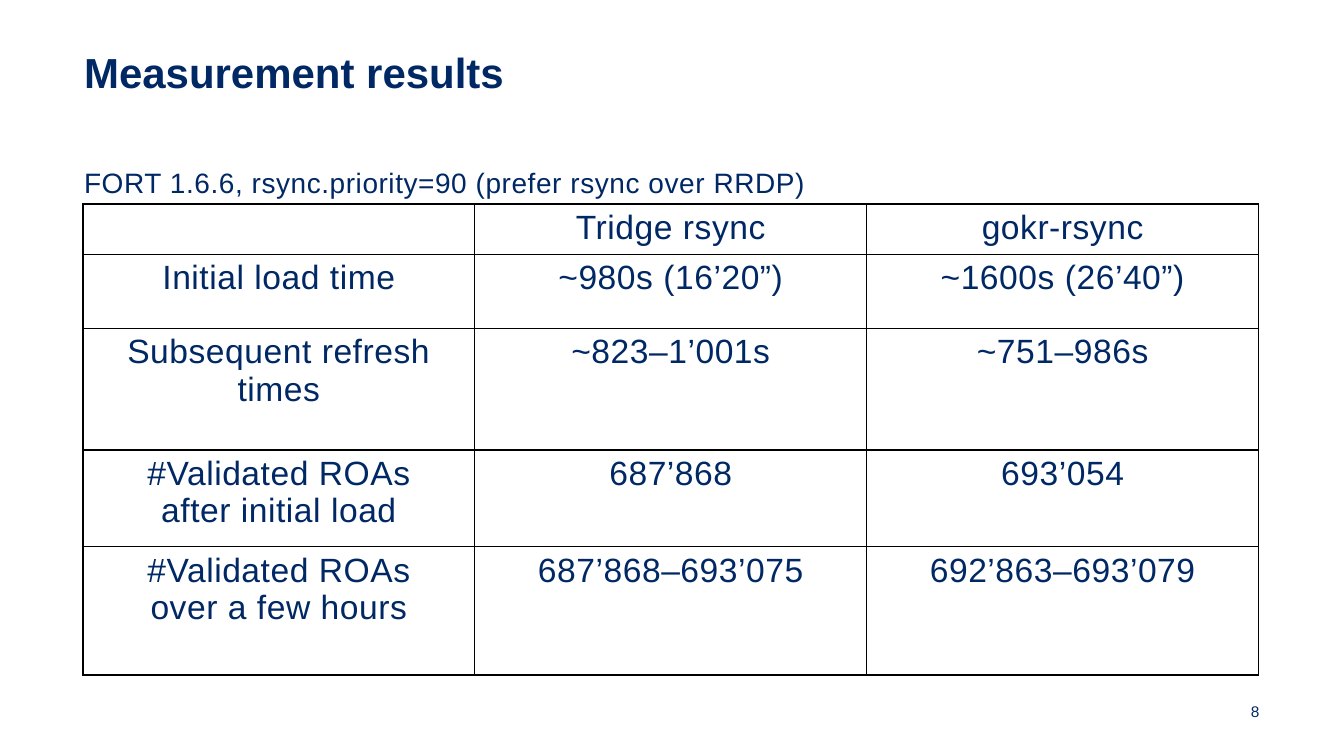
"""Build the measurement results slide."""
from lxml import etree
from pptx import Presentation
from pptx import util as u
from pptx.dml.color import RGBColor
from pptx.enum import text
from pptx.oxml.ns import qn

COLORS = {"navy": "002864", "line": "000000"}
CENTER, RIGHT = text.PP_ALIGN.CENTER, text.PP_ALIGN.RIGHT

ROWS = [
    ["", "Tridge rsync", "gokr-rsync"],
    ["Initial load time", "~980s (16’20”)", "~1600s (26’40”)"],
    ["Subsequent refresh times", "~823–1’001s", "~751–986s"],
    ["#Validated ROAs\nafter initial load", "687’868", "693’054"],
    ["#Validated ROAs\nover a few hours", "687’868–693’075", "692’863–693’079"],
]
ROW_HEIGHTS = [1.19, 1.86, 3.07, 2.44, 3.23]


def write(tf, content, size=24, bold=False, align=None, spacing=None, tracking=40):
    for i, line in enumerate(content.split("\n")):
        p = tf.add_paragraph() if i else tf.paragraphs[0]
        p.alignment = align
        p.line_spacing = spacing
        r = p.add_run()
        r.text = line
        r.font.name = "Arial"
        r.font.size = u.Pt(size)
        r.font.bold = bold
        r.font.color.rgb = RGBColor.from_string(COLORS["navy"])
        r._r.get_or_add_rPr().set("spc", str(tracking))


class Deck:
    """Holds the slide style and the current slide."""

    def __init__(self):
        self.prs = Presentation()
        self.prs.slide_width, self.prs.slide_height = u.Cm(33.87), u.Cm(19.05)
        self.s = self.prs.slides.add_slide(self.prs.slide_layouts[6])

    def textbox(self, content, x, y, w, h, **fmt):
        tf = self.s.shapes.add_textbox(u.Cm(x), u.Cm(y), u.Cm(w), u.Cm(h)).text_frame
        tf.word_wrap = True
        tf.margin_left = tf.margin_top = tf.margin_right = tf.margin_bottom = 0
        write(tf, content, **fmt)

    def border(self, cell):
        tcPr = cell._tc.get_or_add_tcPr()
        for side in ("a:lnL", "a:lnR", "a:lnT", "a:lnB"):
            ln = etree.SubElement(tcPr, qn(side), w=str(u.Pt(1)))
            fill = etree.SubElement(ln, qn("a:solidFill"))
            etree.SubElement(fill, qn("a:srgbClr"), val=COLORS["line"])

    def table(self, rows, heights, x, y, w):
        shape = self.s.shapes.add_table(len(rows), len(rows[0]), u.Cm(x), u.Cm(y),
                                        u.Cm(w), u.Cm(sum(heights)))
        table = shape.table
        table.first_row = table.horz_banding = False
        for row, height, values in zip(table.rows, heights, rows):
            row.height = u.Cm(height)
            for cell, value in zip(row.cells, values):
                self.border(cell)
                cell.fill.background()
                if value:
                    write(cell.text_frame, value, align=CENTER)


def main():
    deck = Deck()
    deck.textbox("Measurement results", 2.12, 1.17, 29.63, 1.27,
                 size=30, bold=True, tracking=0)
    deck.textbox("FORT 1.6.6, rsync.priority=90 (prefer rsync over RRDP)",
                 2.12, 4.06, 29.63, 0.95, size=20, spacing=1.14)
    deck.table(ROWS, ROW_HEIGHTS, 2.09, 5.14, 29.63)
    deck.textbox("8", 29.66, 17.63, 2.08, 0.41, size=11, align=RIGHT, spacing=1.14)
    deck.prs.save("out.pptx")


if __name__ == "__main__":
    main()
